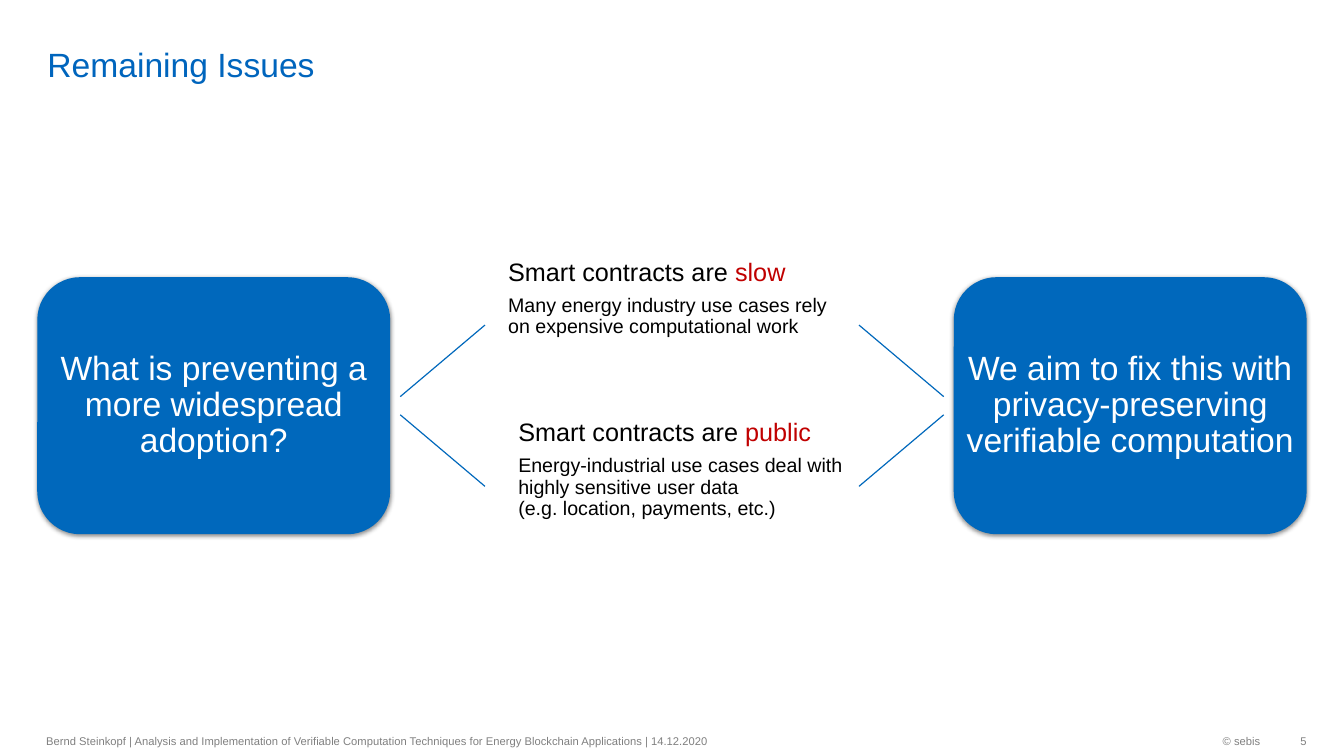
from lxml.etree import SubElement
from pptx import Presentation
from pptx.dml.color import RGBColor
from pptx.enum.shapes import MSO_CONNECTOR, MSO_SHAPE
from pptx.enum.text import MSO_ANCHOR, MSO_AUTO_SIZE, PP_ALIGN
from pptx.oxml.ns import qn
from pptx.util import Inches, Pt

BLUE, RED, GRAY = "0068BC", "C00000", "808080"


def color(code):
    return RGBColor.from_string(code)


def add_run(para, text, size, code):
    run = para.add_run()
    run.text = text
    run.font.name = "Arial"
    run.font.size = Pt(size)
    run.font.color.rgb = color(code)


def set_frame(frame, anchor, margins):
    frame.word_wrap = True
    frame.auto_size = MSO_AUTO_SIZE.NONE
    frame.vertical_anchor = anchor
    (frame.margin_left, frame.margin_top,
     frame.margin_right, frame.margin_bottom) = map(Inches, margins)


def add_title(slide, box, text):
    title = slide.shapes.title
    title.left, title.top, title.width, title.height = map(Inches, box)
    set_frame(title.text_frame, MSO_ANCHOR.BOTTOM, (0.1, 0, 0.1, 0))
    para = title.text_frame.paragraphs[0]
    para.alignment = PP_ALIGN.LEFT
    add_run(para, text, 24, "0065BD")


def add_shadow(shape):
    """Give the shape a soft shadow straight below it."""
    effects = shape._element.spPr.find(qn("a:effectLst"))
    shadow = SubElement(effects, qn("a:outerShdw"), blurRad=str(Pt(3.5)),
                        dist=str(Pt(1.1)), dir="5400000", rotWithShape="0")
    black = SubElement(shadow, qn("a:srgbClr"), val="000000")
    SubElement(black, qn("a:alpha"), val="45000")


def add_card(slide, box, text):
    card = slide.shapes.add_shape(MSO_SHAPE.ROUNDED_RECTANGLE, *map(Inches, box))
    card.shadow.inherit = False
    add_shadow(card)
    card.fill.solid()
    card.fill.fore_color.rgb = color(BLUE)
    card.line.fill.background()
    set_frame(card.text_frame, MSO_ANCHOR.MIDDLE, (0, 0, 0, 0))
    para = card.text_frame.paragraphs[0]
    para.alignment = PP_ALIGN.CENTER
    para.line_spacing = 0.9
    add_run(para, text, 24, "FFFFFF")


def add_issue(slide, box, word, lines):
    frame = slide.shapes.add_textbox(*map(Inches, box)).text_frame
    set_frame(frame, MSO_ANCHOR.TOP, (0.14,) * 4)
    head, body = frame.paragraphs[0], frame.add_paragraph()
    head.line_spacing = body.line_spacing = 0.9
    head.space_after = Pt(6.3)
    add_run(head, "Smart contracts are ", 18, "000000")
    add_run(head, word, 18, RED)
    for i, line in enumerate(lines):
        if i:
            body.add_line_break()
        add_run(body, line, 14, "000000")


def add_fork(slide, x, end, mid):
    """Draw two lines that spread from x to end, above and below mid."""
    for side in (-1, 1):
        near, far = mid + side * 0.09, mid + side * 0.8
        line = slide.shapes.add_connector(
            MSO_CONNECTOR.STRAIGHT, *map(Inches, (x, near, end, far)))
        line.line.color.rgb = color(BLUE)
        line.line.width = Pt(0.85)
        SubElement(line._element.spPr, qn("a:effectLst"))


def add_flow(slide, box):
    """Place a card at each end of the box and the issues between them."""
    left, top, width, height = box
    right, mid = left + width, top + height / 2
    card = 3.5
    add_card(slide, (left, top, card, height),
             "What is preventing a more widespread adoption?")
    add_card(slide, (right - card, top, card, height),
             "We aim to fix this with privacy-preserving verifiable computation")
    near, far = card + 0.1, card + 0.94
    add_fork(slide, left + near, left + far, mid)
    add_fork(slide, right - near, right - far, mid)
    add_issue(slide, (left + 4.53, mid - 1.59, 3.7, 1.59), "slow",
              ["Many energy industry use cases rely on expensive computational work"])
    add_issue(slide, (left + 4.63, mid, 3.52, 1.59), "public",
              ["Energy-industrial use cases deal with highly sensitive user data",
               "(e.g. location, payments, etc.)"])


def add_footer(slide, box):
    left, top, width, height = box
    right = left + width
    parts = [
        (left, 6.97, 0.1, PP_ALIGN.LEFT,
         "Bernd Steinkopf | Analysis and Implementation of Verifiable Computation "
         "Techniques for Energy Blockchain Applications | 14.12.2020"),
        (right - 2.7, 2.34, 0.1, PP_ALIGN.RIGHT, "© sebis"),
        (right - 0.36, 0.36, 0, PP_ALIGN.RIGHT, "5"),
    ]
    for x, wide, margin, align, text in parts:
        note = slide.shapes.add_textbox(*map(Inches, (x, top, wide, height)))
        set_frame(note.text_frame, MSO_ANCHOR.MIDDLE, (0.1, 0.05, margin, 0.05))
        para = note.text_frame.paragraphs[0]
        para.alignment = align
        add_run(para, text, 8, GRAY)


def main():
    deck = Presentation()
    deck.slide_width, deck.slide_height = Inches(13.33), Inches(7.5)
    slide = deck.slides.add_slide(deck.slide_layouts[5])
    add_title(slide, (0.37, 0.05, 11.58, 0.79), "Remaining Issues")
    add_flow(slide, (0.37, 2.75, 12.59, 2.55))
    add_footer(slide, (0.36, 7.19, 12.6, 0.32))
    deck.save("out.pptx")


if __name__ == "__main__":
    main()
